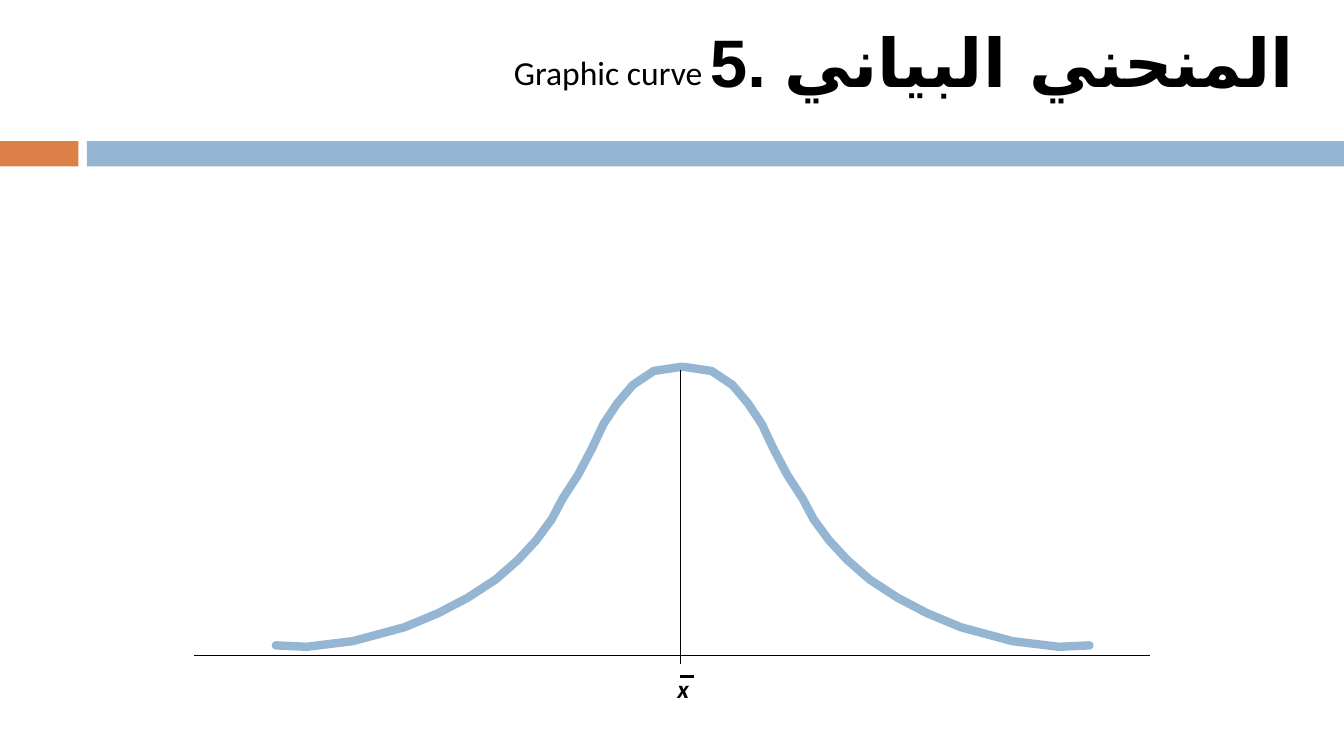
from lxml import etree
from pptx import Presentation
from pptx.dml.color import RGBColor
from pptx.enum.shapes import MSO_CONNECTOR, MSO_SHAPE
from pptx.enum.text import MSO_ANCHOR, MSO_AUTO_SIZE, PP_ALIGN
from pptx.oxml.ns import qn
from pptx.util import Pt

BLACK = RGBColor(0x00, 0x00, 0x00)
BLUE = RGBColor(0x94, 0xB6, 0xD2)
ORANGE = RGBColor(0xDD, 0x80, 0x47)

prs = Presentation()
prs.slide_width, prs.slide_height = Pt(960), Pt(540)
slide = prs.slides.add_slide(prs.slide_layouts[5])
shapes = slide.shapes


def add_rule(x1, y1, x2, y2, width=1):
    rule = shapes.add_connector(MSO_CONNECTOR.STRAIGHT, Pt(x1), Pt(y1), Pt(x2), Pt(y2))
    rule.line.color.rgb = BLACK
    rule.line.width = Pt(width)
    etree.SubElement(rule._element.spPr, qn("a:effectLst"))


def write(paragraph, text, font_name, size):
    run = paragraph.add_run()
    run.text = text
    run.font.name = font_name
    run.font.size = Pt(size)
    run.font.color.rgb = BLACK
    return run


# Header band
for left, width, color in [(0, 56, ORANGE), (62, 898, BLUE)]:
    band = shapes.add_shape(MSO_SHAPE.RECTANGLE, Pt(left), Pt(100.8), Pt(width), Pt(18))
    band.shadow.inherit = False
    band.fill.solid()
    band.fill.fore_color.rgb = color
    band.line.fill.background()

# Title and its translation
title = shapes.title
title.left, title.top, title.width, title.height = Pt(342), Pt(17.7), Pt(589.7), Pt(60)
title_frame = title.text_frame
title_frame.auto_size = MSO_AUTO_SIZE.NONE
title_frame.word_wrap = True
title_frame.vertical_anchor = MSO_ANCHOR.TOP
heading = title_frame.paragraphs[0]
heading.alignment = PP_ALIGN.RIGHT
heading.line_spacing = 0.9
heading_run = write(heading, "5. المنحني البياني", "Arial", 48)
heading_run.font.bold = True
arabic_font = etree.SubElement(heading_run._r.get_or_add_rPr(), qn("a:cs"))
arabic_font.set("typeface", "DejaVu Sans")

translation = shapes.add_textbox(Pt(360), Pt(33.8), Pt(195), Pt(36))
translation.text_frame.word_wrap = True
write(translation.text_frame.paragraphs[0], "Graphic curve", "Calibri", 24)

# Bell curve: the left half, then its mirror about the mean
left_half = [
    (197, 461), (219, 462), (252, 458), (289, 448), (313, 438), (334, 427),
    (354, 414), (370, 400), (383, 386), (394, 371), (402, 356), (413, 339),
    (423, 320), (431, 303), (441, 288), (452, 275), (467, 265), (487, 262),
]
right_half = [(975.2 - x, y) for x, y in left_half]
bell = shapes.add_group_shape()
for half in (left_half, right_half):
    points = [(Pt(x), Pt(y)) for x, y in half]
    builder = bell.shapes.build_freeform(*points[0], scale=1.0)
    builder.add_line_segments(points[1:], close=False)
    curve = builder.convert_to_shape()
    curve.shadow.inherit = False
    curve.fill.background()
    curve.line.color.rgb = BLUE
    curve.line.width = Pt(6)
    curve.line._get_or_add_ln().set("cap", "rnd")

# Axis, mean line and tick
add_rule(138.5, 468, 821.5, 468)
add_rule(486, 264, 486, 467.5)
add_rule(486, 462, 486, 474)

# Mean label: x with a bar above it
mean_label = shapes.add_textbox(Pt(473), Pt(477.3), Pt(30), Pt(29))
mean_label.text_frame.word_wrap = False
mean = mean_label.text_frame.paragraphs[0]
mean.alignment = PP_ALIGN.CENTER
mean_run = write(mean, "x", "Calibri", 18)
mean_run.font.bold = True
mean_run.font.italic = True
add_rule(485.5, 483, 495.5, 483, width=2)

prs.save("out.pptx")
